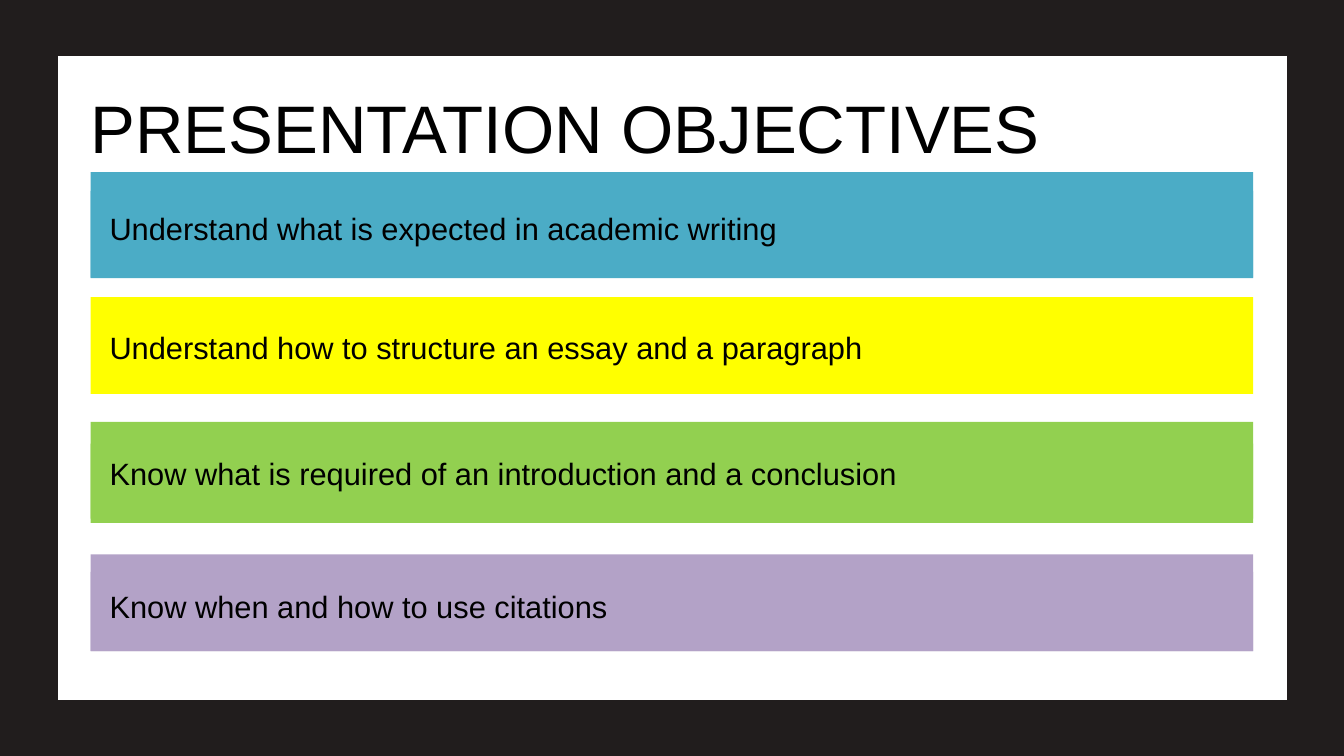
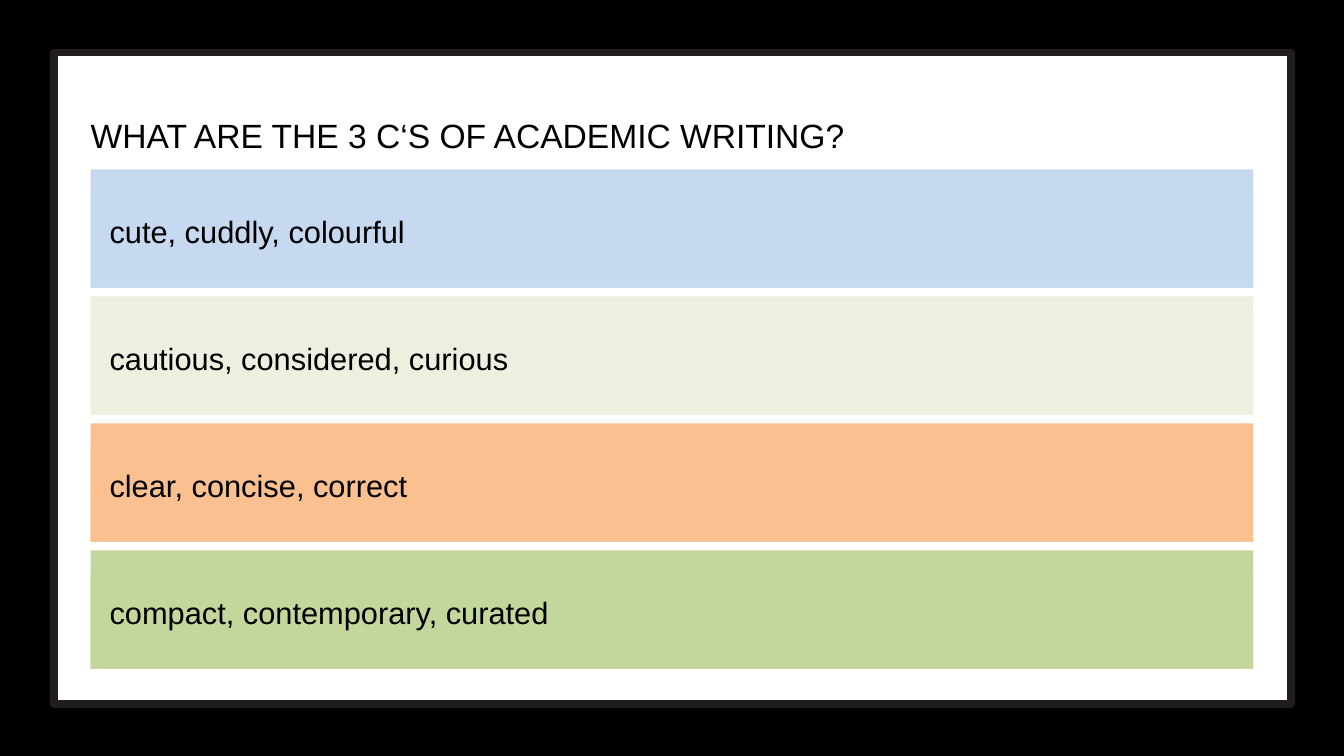
from pptx import Presentation
from pptx.dml.color import RGBColor
from pptx.enum.shapes import MSO_SHAPE
from pptx.enum.text import MSO_ANCHOR, PP_ALIGN
from pptx.util import Pt

RECTANGLE = MSO_SHAPE.RECTANGLE
TOP, MIDDLE = MSO_ANCHOR.TOP, MSO_ANCHOR.MIDDLE
LEFT = PP_ALIGN.LEFT

PX = 9144  # EMU per px, 100 px to the inch
SLIDE_SIZE = (2000, 1125)
FRAME_BOX = (80, 78, 1841, 970)
BAR_LEFT, BAR_WIDTH = 135, 1730
TITLE_WIDTH = 1807
LABEL_INSET = 28
BLANK_LAYOUT = 6

FONT = "Arial"
BLACK = RGBColor(0x00, 0x00, 0x00)
WHITE = RGBColor(0xFF, 0xFF, 0xFF)
CHARCOAL = RGBColor(0x21, 0x1D, 0x1D)
TEAL = RGBColor(0x4B, 0xAC, 0xC6)
YELLOW = RGBColor(0xFF, 0xFF, 0x00)
GREEN = RGBColor(0x92, 0xD0, 0x50)
PURPLE = RGBColor(0xB3, 0xA2, 0xC7)
PALE_BLUE = RGBColor(0xC6, 0xD9, 0xF1)
PALE_GREEN = RGBColor(0xEB, 0xF1, 0xDE)
ORANGE = RGBColor(0xFA, 0xC0, 0x90)
SAGE = RGBColor(0xC3, 0xD6, 0x9B)

# Text, colour, band (top, height), label (top, height), label filled
OBJECTIVES = [
    ("Understand what is expected in academic writing",
     TEAL, (284, 129), (256, 158), True),
    ("Understand how to structure an essay and a paragraph",
     YELLOW, (442, 144), (424, 176), False),
    ("Know what is required of an introduction and a conclusion",
     GREEN, (660, 118), (628, 144), True),
    ("Know when and how to use citations",
     PURPLE, (851, 118), (825, 144), True),
]

ANSWERS = [
    ("cute, cuddly, colourful", PALE_BLUE),
    ("cautious, considered, curious", PALE_GREEN),
    ("clear, concise, correct", ORANGE),
    ("compact, contemporary, curated", SAGE),
]
ANSWER_TOP, ANSWER_PITCH, ANSWER_HEIGHT = 252, 189, 176
ANSWER_BAND_OFFSET = 32


def emu(box):
    return [length * PX for length in box]


def set_all(target, values):
    for name, value in values.items():
        setattr(target, name, value)


def add_rectangle(slide, box, fill=None):
    rectangle = slide.shapes.add_shape(RECTANGLE, *emu(box))
    rectangle.shadow.inherit = False
    rectangle.line.fill.background()
    if fill is None:
        rectangle.fill.background()
    else:
        rectangle.fill.solid()
        rectangle.fill.fore_color.rgb = fill
    return rectangle


def write_line(holder, text, size, leading, inset, anchor):
    """Put one line of left-aligned black text in a shape."""
    frame = holder.text_frame
    margin = inset * PX
    set_all(frame, {
        "word_wrap": True, "vertical_anchor": anchor,
        "margin_left": margin, "margin_top": margin,
        "margin_right": margin, "margin_bottom": margin,
    })
    paragraph = frame.paragraphs[0]
    set_all(paragraph, {"alignment": LEFT, "line_spacing": Pt(leading)})
    run = paragraph.add_run()
    run.text = text
    set_all(run.font, {"name": FONT, "size": Pt(size)})
    run.font.color.rgb = BLACK


def add_framed_slide(deck, background):
    """Start a slide with the white panel and its dark border."""
    slide = deck.slides.add_slide(deck.slide_layouts[BLANK_LAYOUT])
    slide.background.fill.solid()
    slide.background.fill.fore_color.rgb = background
    panel = add_rectangle(slide, FRAME_BOX, WHITE)
    panel.line.color.rgb = CHARCOAL
    panel.line.width = Pt(8.25)
    return slide


def add_title(slide, text, top, height, size, leading):
    box = (BAR_LEFT, top, TITLE_WIDTH, height)
    title = slide.shapes.add_textbox(*emu(box))
    write_line(title, text, size, leading, 0, TOP)


def add_bar(slide, text, color, band, label, label_filled=True):
    """Add a coloured band with its label; both are (top, height)."""
    band_top, band_height = band
    label_top, label_height = label
    add_rectangle(slide, (BAR_LEFT, band_top, BAR_WIDTH, band_height), color)
    label_box = (BAR_LEFT, label_top, BAR_WIDTH, label_height)
    wording = add_rectangle(slide, label_box, color if label_filled else None)
    write_line(wording, text, 33, 46.2, LABEL_INSET, MIDDLE)


def add_objectives_slide(deck):
    slide = add_framed_slide(deck, CHARCOAL)
    for objective in OBJECTIVES:
        add_bar(slide, *objective)
    add_title(slide, "PRESENTATION OBJECTIVES", 108, 132, 72, 100.8)


def add_question_slide(deck):
    slide = add_framed_slide(deck, BLACK)
    for index, (answer, color) in enumerate(ANSWERS):
        top = ANSWER_TOP + index * ANSWER_PITCH
        band = (top + ANSWER_BAND_OFFSET, ANSWER_HEIGHT - ANSWER_BAND_OFFSET)
        add_bar(slide, answer, color, band, (top, ANSWER_HEIGHT))
    add_title(slide, "WHAT ARE THE 3 C‘S OF ACADEMIC WRITING?",
              112, 105, 36, 85.4)


def main():
    deck = Presentation()
    deck.slide_width, deck.slide_height = emu(SLIDE_SIZE)
    add_objectives_slide(deck)
    add_question_slide(deck)
    deck.save("out.pptx")


if __name__ == "__main__":
    main()
